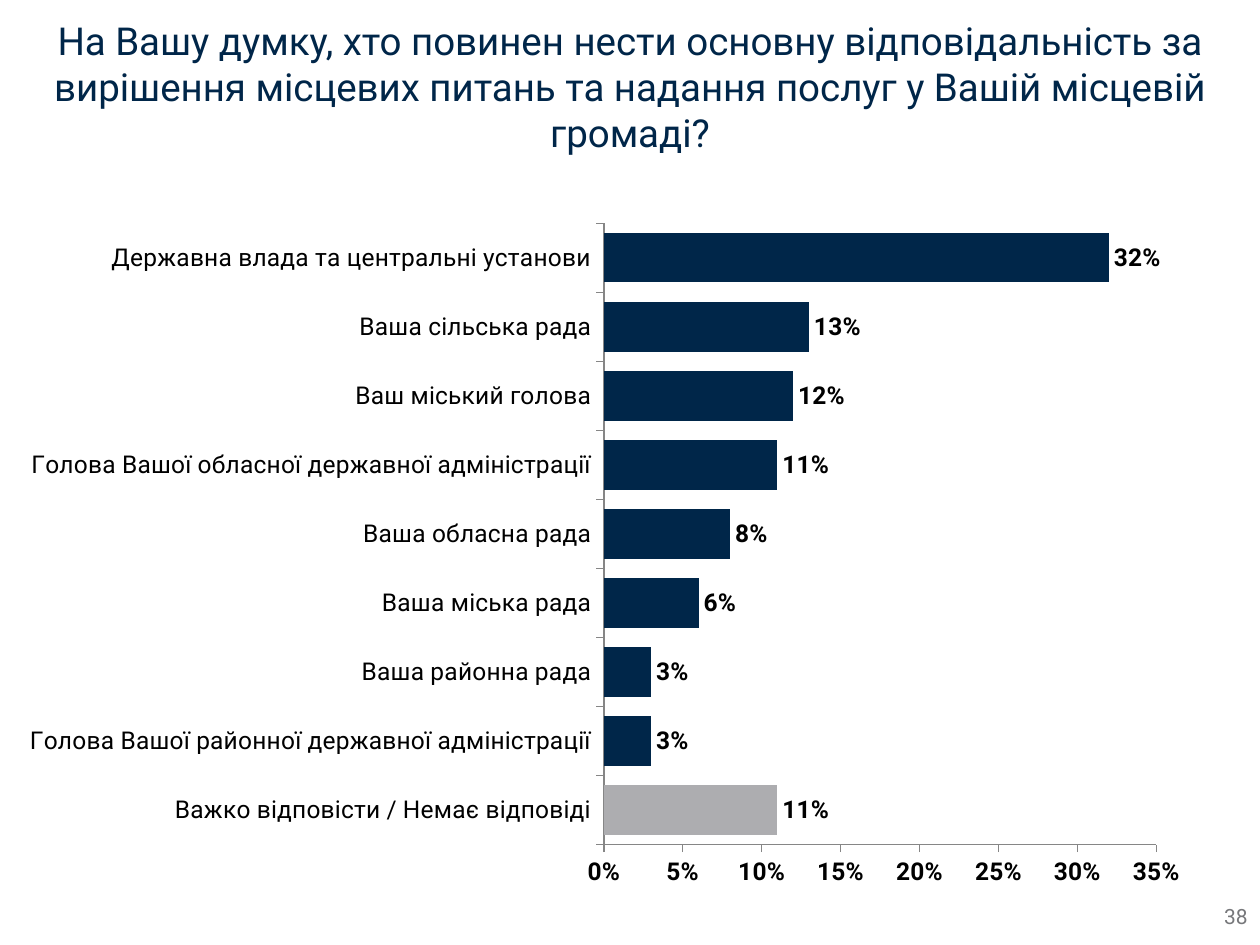
from lxml.etree import SubElement
from pptx import Presentation
from pptx.chart.data import CategoryChartData
from pptx.dml.color import RGBColor
from pptx.enum.chart import XL_CHART_TYPE, XL_LABEL_POSITION, XL_TICK_MARK
from pptx.enum.text import MSO_ANCHOR, PP_ALIGN
from pptx.oxml.ns import qn
from pptx.util import Inches, Pt

FONT = "Roboto"
COLORS = {
    "navy": "002649",
    "silver": "ADADB0",
    "number": "77787B",
    "axis": "868686",
    "black": "000000",
}
ANSWERS = [
    ("Важко відповісти / Немає відповіді", 0.11),
    ("Голова Вашої районної державної адмiністрації", 0.03),
    ("Ваша районна рада", 0.03),
    ("Ваша мiська рада", 0.06),
    ("Ваша обласна рада", 0.08),
    ("Голова Вашої обласної державної адміністрації", 0.11),
    ("Ваш мiський голова", 0.12),
    ("Ваша сiльська рада", 0.13),
    ("Державна влада та центральнi установи", 0.32),
]
PLOT_LAYOUT = {
    "layoutTarget": "inner",
    "xMode": "edge",
    "yMode": "edge",
    "x": "0.485",
    "y": "0.027",
    "w": "0.463",
    "h": "0.873",
}


def style_font(font, size, color, bold=False):
    font.name = FONT
    font.size = Pt(size)
    font.bold = bold
    font.color.rgb = RGBColor.from_string(COLORS[color])


def add_text(page, place, text, size, color, align):
    box = page.shapes.add_textbox(*[Inches(length) for length in place])
    frame = box.text_frame
    frame.word_wrap = True
    frame.vertical_anchor = MSO_ANCHOR.MIDDLE
    para = frame.paragraphs[0]
    para.alignment = align
    span = para.add_run()
    span.text = text
    style_font(span.font, size, color)


deck = Presentation()
deck.slide_width = Inches(10)
deck.slide_height = Inches(7.5)
page = deck.slides.add_slide(deck.slide_layouts[6])

add_text(
    page,
    (0.31, 0.52, 9.38, 0.33),
    "На Вашу думку, хто повинен нести основну відповідальність за "
    "вирішення місцевих питань та надання послуг у Вашій місцевій громаді?",
    22,
    "navy",
    PP_ALIGN.CENTER,
)

data = CategoryChartData(number_format="0%")
data.categories = [answer for answer, share in ANSWERS]
data.add_series("Series 1", [share for answer, share in ANSWERS])
chart = page.shapes.add_chart(
    XL_CHART_TYPE.BAR_CLUSTERED,
    Inches(0.2), Inches(1.62), Inches(9.47), Inches(5.65),
    data,
).chart
chart.has_legend = False
chart.has_title = False
style_font(chart.font, 14, "black", True)

plot_area = chart.plots[0]._element.getparent()
for old_layout in plot_area.findall(qn("c:layout")):
    plot_area.remove(old_layout)
layout = SubElement(plot_area, qn("c:layout"))
plot_area.insert(0, layout)
manual = SubElement(layout, qn("c:manualLayout"))
for name, value in PLOT_LAYOUT.items():
    SubElement(manual, qn(f"c:{name}")).set("val", value)

for axis, bold in ((chart.category_axis, False), (chart.value_axis, True)):
    axis.has_major_gridlines = False
    axis.major_tick_mark = XL_TICK_MARK.OUTSIDE
    axis.minor_tick_mark = XL_TICK_MARK.NONE
    axis.format.line.color.rgb = RGBColor.from_string(COLORS["axis"])
    axis.format.line.width = Pt(0.75)
    style_font(axis.tick_labels.font, 14, "black", bold)

scale = chart.value_axis
scale.minimum_scale = 0
scale.maximum_scale = 0.35
scale.major_unit = 0.05
scale.tick_labels.number_format = "0%"
scale.tick_labels.number_format_is_linked = False

plot = chart.plots[0]
plot.gap_width = 40
plot.vary_by_categories = False
plot.has_data_labels = True
labels = plot.data_labels
labels.show_value = True
labels.number_format = "0%"
labels.number_format_is_linked = False
labels.position = XL_LABEL_POSITION.OUTSIDE_END
style_font(labels.font, 14, "black", True)

series = plot.series[0]
series.invert_if_negative = False
for bar, color in ((series, "navy"), (series.points[0], "silver")):
    bar.format.fill.solid()
    bar.format.fill.fore_color.rgb = RGBColor.from_string(COLORS[color])

add_text(page, (7.75, 7.07, 2.25, 0.4), "38", 12, "number", PP_ALIGN.RIGHT)

deck.save("out.pptx")
